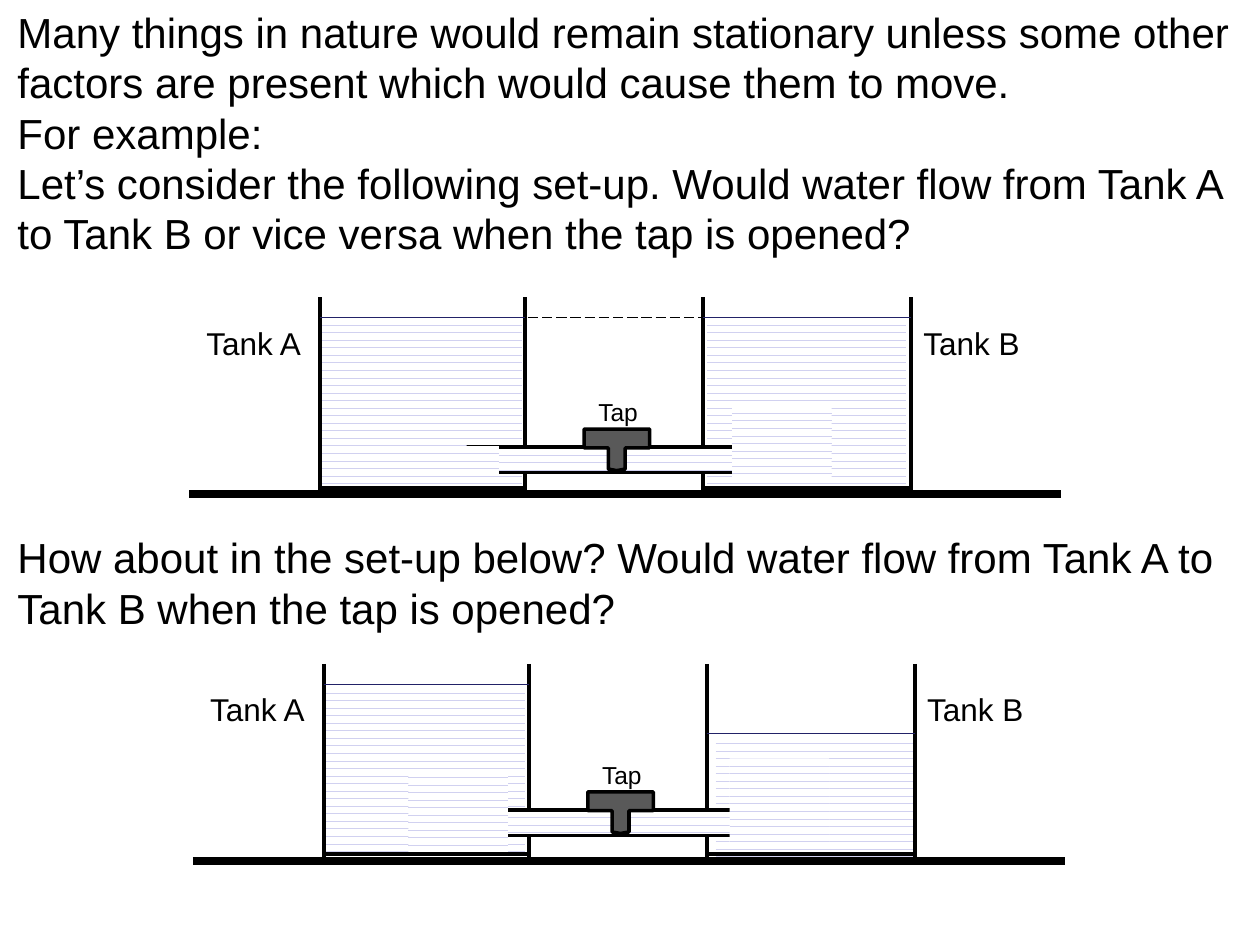
from lxml import etree
from pptx import Presentation
from pptx import util as u
from pptx.dml.color import RGBColor
from pptx.enum import dml, shapes, text
from pptx.oxml.ns import qn

COLORS = {"ink": "000000", "wave": "D1D1F0", "paper": "FFFFFF",
          "surface": "222267", "tap": "595959"}
FONT = "Arial"
SETUP_WIDTH, SETUP_HEIGHT = 6.92, 1.56
WALLS_A = (1.04, 2.67)
WALLS_B = (4.08, 5.73)


def color(name):
    return RGBColor.from_string(COLORS[name])


def add_text(parent, box, paragraphs, size, wrap=True):
    frame = parent.add_textbox(*map(u.Inches, box)).text_frame
    frame.word_wrap = wrap
    frame.auto_size = text.MSO_AUTO_SIZE.SHAPE_TO_FIT_TEXT
    frame.text = "\n".join(paragraphs)
    for paragraph in frame.paragraphs:
        for run in paragraph.runs:
            run.font.name = FONT
            run.font.size = u.Pt(size)
            run.font.color.rgb = color("ink")


def add_line(parent, start, end, width, name="ink", dash=None):
    line = parent.add_connector(shapes.MSO_CONNECTOR.STRAIGHT,
                                *map(u.Inches, (*start, *end)))
    line.line.width = u.Pt(width)
    line.line.color.rgb = color(name)
    if dash is not None:
        line.line.dash_style = dash
    etree.SubElement(line._element.spPr, qn("a:effectLst"))


def add_outline(shape, width):
    shape.line.width = u.Pt(width)
    shape.line.color.rgb = color("ink")


def add_water(parent, box):
    water = parent.add_shape(shapes.MSO_SHAPE.RECTANGLE, *map(u.Inches, box))
    water.shadow.inherit = False
    water.fill.patterned()
    water.fill.pattern = dml.MSO_PATTERN.DASHED_HORIZONTAL
    water.fill.fore_color.rgb = color("wave")
    water.fill.back_color.rgb = color("paper")
    water.line.fill.background()
    return water


def add_tap(parent, left, top):
    """Draw the T-shaped tap, a left arrow callout turned to point down."""
    tap = parent.add_shape(shapes.MSO_SHAPE.LEFT_ARROW_CALLOUT,
                           *map(u.Inches, (left, top, 0.33, 0.52)))
    tap.rotation = 270
    tap.shadow.inherit = False
    for index, value in enumerate((0.407, 0.204, 0.037, 0.45)):
        tap.adjustments[index] = value
    tap.fill.solid()
    tap.fill.fore_color.rgb = color("tap")
    add_outline(tap, 2)


def add_setup(slide, left, top, water_a, water_b, pipe_top, patches,
              surface_b, level_mark):
    """Draw two joined tanks; all other measures are relative to left, top."""
    parent = slide.shapes.add_group_shape().shapes

    def at(x, y, *size):
        return (left + x, top + y, *size)

    def wall(x):
        add_line(parent, at(x, 0), at(x, SETUP_HEIGHT), 2.25)

    add_text(parent, at(0.04, 0.16, 0.96, 0.4), ["Tank A"], 18, wrap=False)
    add_text(parent, at(5.73, 0.16, 0.97, 0.4), ["Tank B"], 18, wrap=False)
    wall(WALLS_B[0])
    wall(WALLS_A[1])

    for box in (water_a, water_b):
        add_water(parent, at(*box))
    pipe = add_water(parent, at(2.21, pipe_top, 2.42, 0.2))
    add_outline(pipe, 2)
    for box in patches:  # water hiding the closed ends of the pipe
        add_water(parent, at(*box))

    add_line(parent, at(0, SETUP_HEIGHT), at(SETUP_WIDTH, SETUP_HEIGHT), 4.5)
    wall(WALLS_A[0])
    wall(WALLS_B[1])
    for first, last in (WALLS_A, WALLS_B):
        add_line(parent, at(last, 1.51), at(first, 1.51), 2.25)
    for (first, last), level in ((WALLS_A, 0.16), (WALLS_B, surface_b)):
        add_line(parent, at(first, level), at(last, level), 0.75, "surface")
    if level_mark:
        add_line(parent, at(WALLS_A[1] + 0.02, 0.16), at(WALLS_B[0], 0.16),
                 0.75, dash=dml.MSO_LINE.LONG_DASH)

    add_tap(parent, *at(3.23, pipe_top - 0.24))
    add_text(parent, at(3.15, pipe_top - 0.45, 0.52, 0.34), ["Tap"], 14,
             wrap=False)


def main():
    presentation = Presentation()
    presentation.slide_width = u.Inches(10)
    presentation.slide_height = u.Inches(7.5)
    slide = presentation.slides.add_slide(presentation.slide_layouts[6])

    add_text(slide.shapes, (0.04, 0, 9.88, 2.52), [
        "Many things in nature would remain stationary unless some other "
        "factors are present which would cause them to move.",
        "For example:",
        "Let’s consider the following set-up. Would water flow from Tank A "
        "to Tank B or vice versa when the tap is opened?"], 24)
    add_text(slide.shapes, (0.04, 4.17, 9.71, 0.91), [
        "How about in the set-up below? Would water flow from Tank A to "
        "Tank B when the tap is opened?"], 24)

    add_setup(slide, 1.5, 2.36,
              water_a=(1.04, 0.16, 1.6, 1.39),
              water_b=(4.11, 0.16, 1.58, 1.39),
              pipe_top=1.19,
              patches=[(1.67, 1.18, 0.79, 0.24), (4.31, 0.86, 0.79, 0.57)],
              surface_b=0.16, level_mark=True)
    add_setup(slide, 1.53, 5.27,
              water_a=(1.04, 0.17, 1.6, 1.39),
              water_b=(4.15, 0.57, 1.58, 0.99),
              pipe_top=1.16,
              patches=[(1.71, 0.84, 0.79, 0.7), (4.26, 0.75, 0.79, 0.7)],
              surface_b=0.55, level_mark=False)

    presentation.save("out.pptx")


if __name__ == "__main__":
    main()
